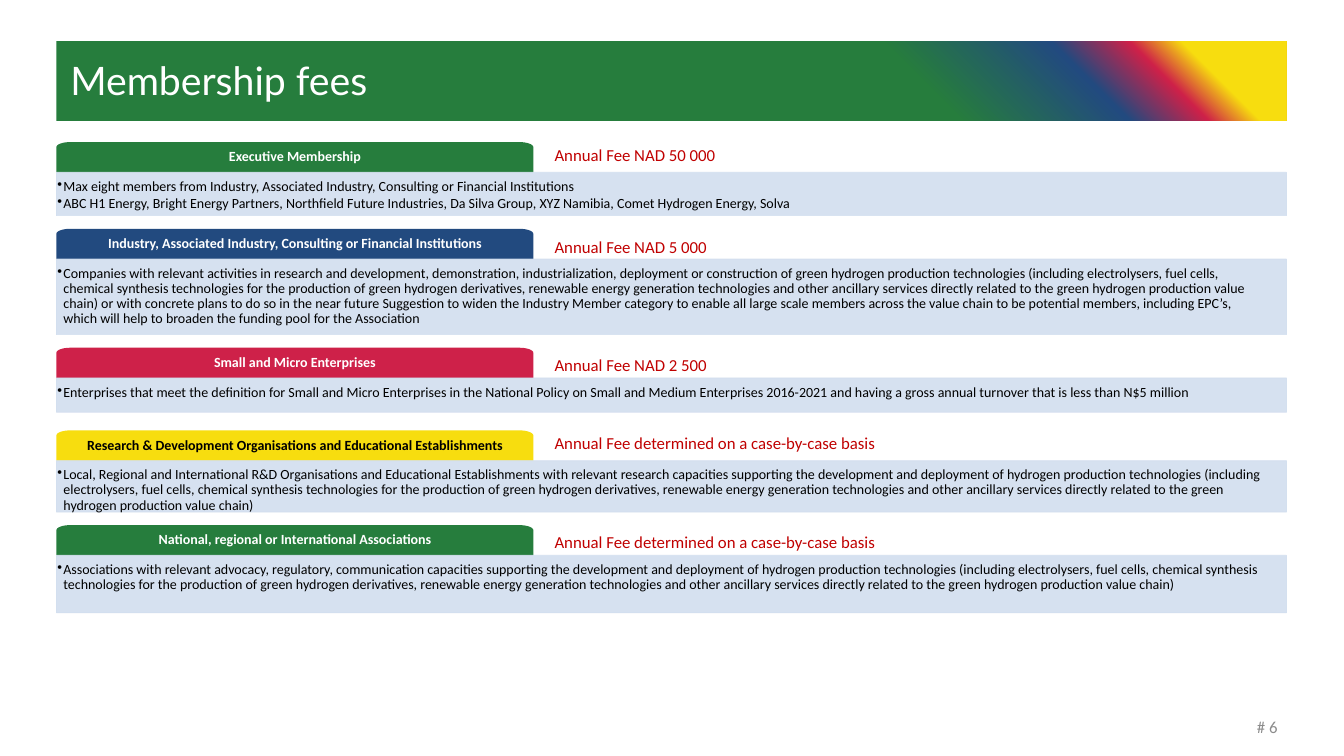
from dataclasses import dataclass
from math import cos, pi, sin

from lxml.etree import SubElement
from pptx import Presentation
from pptx.dml.color import RGBColor
from pptx.enum.shapes import MSO_SHAPE as Shape
from pptx.enum.text import MSO_ANCHOR as Anchor, PP_ALIGN as Align
from pptx.oxml import parse_xml
from pptx.oxml.ns import nsdecls, qn
from pptx.util import Inches, Pt

COLORS = {
    "green": "267D3D", "blue": "224A7F", "red": "CE2149", "yellow": "F7DD0F",
    "panel": "D2DEEF", "fee": "C00000", "grey": "8C8C8C",
    "white": "FFFFFF", "black": "000000",
}
BANNER_STOPS = [(8, "yellow"), (12, "red"), (18, "blue"), (31, "green")]

# The grid has 10 columns and 10 rows to the inch.
CELL = Inches(0.1)
LEFT, WIDTH = 5.6, 122
TAB_WIDTH, TAB_HEIGHT = 47.3, 3
FEE_LEFT, FEE_WIDTH = 54.7, 73
FIRST_TOP = 14.1


@dataclass
class Category:
    name: str
    color: str
    fee: str
    points: list
    panel_rows: float
    fee_shift: float = 0
    gap: float = 1.3
    name_color: str = "white"


CATEGORIES = [
    Category("Executive Membership", "green", "Annual Fee NAD 50 000", [
        "Max eight members from Industry, Associated Industry, Consulting or Financial Institutions",
        "ABC H1 Energy, Bright Energy Partners, Northfield Future Industries, Da Silva Group, "
        "XYZ Namibia, Comet Hydrogen Energy, Solva",
    ], 4.3, fee_shift=-0.4),
    Category("Industry, Associated Industry, Consulting or Financial Institutions", "blue",
             "Annual Fee NAD 5 000", [
        "Companies with relevant activities in research and development, demonstration, "
        "industrialization, deployment or construction of green hydrogen production technologies "
        "(including electrolysers, fuel cells, chemical synthesis technologies for the production "
        "of green hydrogen derivatives, renewable energy generation technologies and other "
        "ancillary services directly related to the green hydrogen production value chain) or "
        "with concrete plans to do so in the near future Suggestion to widen the Industry Member "
        "category to enable all large scale members across the value chain to be potential "
        "members, including EPC’s, which will help to broaden the funding pool for the Association",
    ], 7.5, fee_shift=0.1),
    Category("Small and Micro Enterprises", "red", "Annual Fee NAD 2 500", [
        "Enterprises that meet the definition for Small and Micro Enterprises in the National "
        "Policy on Small and Medium Enterprises 2016-2021 and having a gross annual turnover that "
        "is less than N$5 million",
    ], 3.4, gap=1.8),
    Category("Research & Development Organisations and Educational Establishments", "yellow",
             "Annual Fee determined on a case-by-case basis", [
        "Local, Regional and International R&D Organisations and Educational Establishments with "
        "relevant research capacities supporting the development and deployment of hydrogen "
        "production technologies (including electrolysers, fuel cells, chemical synthesis "
        "technologies for the production of green hydrogen derivatives, renewable energy "
        "generation technologies and other ancillary services directly related to the green "
        "hydrogen production value chain)",
    ], 5.1, fee_shift=-0.4, name_color="black"),
    Category("National, regional or International Associations", "green",
             "Annual Fee determined on a case-by-case basis", [
        "Associations with relevant advocacy, regulatory, communication capacities supporting the "
        "development and deployment of hydrogen production technologies (including electrolysers, "
        "fuel cells, chemical synthesis technologies for the production of green hydrogen "
        "derivatives, renewable energy generation technologies and other ancillary services "
        "directly related to the green hydrogen production value chain)",
    ], 5.7),
]


def cells(*counts):
    return [round(count * CELL) for count in counts]


def rgb(color):
    return RGBColor.from_string(COLORS[color])


class FeeSlide:
    def __init__(self, presentation):
        self.shapes = presentation.slides.add_slide(presentation.slide_layouts[6]).shapes

    def set_text(self, shape, lines, size, color, insets, font="Calibri", bold=False,
                 align=Align.LEFT, anchor=Anchor.MIDDLE, spacing=0.9, bullets=False):
        """Fill a shape with one paragraph per line; insets are in inches."""
        frame = shape.text_frame
        frame.word_wrap = True
        frame.vertical_anchor = anchor
        (frame.margin_left, frame.margin_top,
         frame.margin_right, frame.margin_bottom) = map(Inches, insets)
        for index, line in enumerate(lines):
            paragraph = frame.paragraphs[0] if index == 0 else frame.add_paragraph()
            paragraph.text = line
            if bullets:
                properties = paragraph._p.get_or_add_pPr()
                properties.set("marL", str(Inches(0.06)))
                properties.set("indent", str(-Inches(0.06)))
                SubElement(properties, qn("a:buChar"), char="•")
                paragraph.space_after = Pt(1.2)
            paragraph.alignment = align
            paragraph.line_spacing = spacing
            paragraph.font.name = font
            paragraph.font.size = Pt(size)
            paragraph.font.bold = bold
            paragraph.font.color.rgb = rgb(color)

    def label(self, box, text, size, color, insets=(0.1, 0.05, 0.1, 0.05), **style):
        self.set_text(self.shapes.add_textbox(*cells(*box)), [text], size, color, insets, **style)

    def banner(self, box):
        """Draw a bar whose colours spread from its top right corner."""
        bar = self.shapes.add_shape(Shape.RECTANGLE, *cells(*box))
        bar.shadow.inherit = False
        bar.line.fill.background()
        stops = "".join(
            f'<a:gs pos="{share * 1000}"><a:srgbClr val="{COLORS[color]}"/></a:gs>'
            for share, color in BANNER_STOPS)
        bar._element.spPr.find(qn("a:prstGeom")).addnext(parse_xml(
            f'<a:gradFill {nsdecls("a")} rotWithShape="1"><a:gsLst>{stops}</a:gsLst>'
            '<a:path path="circle"><a:fillToRect l="100000" b="100000"/></a:path></a:gradFill>'))

    def tab(self, top, category):
        """Draw a heading tab with flat elliptical upper corners."""
        across, down, steps = 1.4, 0.5, 8
        right, bottom = LEFT + TAB_WIDTH, top + TAB_HEIGHT
        angles = [pi / 2 * step / steps for step in range(steps + 1)]
        left_corner = [(LEFT + across * (1 - cos(a)), top + down * (1 - sin(a))) for a in angles]
        right_corner = [(LEFT + right - x, y) for x, y in reversed(left_corner)]
        outline = left_corner + right_corner + [(right, bottom), (LEFT, bottom)]
        builder = self.shapes.build_freeform(*cells(*outline[0]))
        builder.add_line_segments([cells(*point) for point in outline[1:]], close=True)
        heading = builder.convert_to_shape()
        heading.shadow.inherit = False
        heading.fill.solid()
        heading.fill.fore_color.rgb = rgb(category.color)
        heading.line.fill.background()
        self.set_text(heading, [category.name], 10, category.name_color,
                      (0.07, 0.05, 0.07, 0.05), bold=True, align=Align.CENTER)

    def panel(self, box, points):
        panel = self.shapes.add_shape(Shape.RECTANGLE, *cells(*box))
        panel.shadow.inherit = False
        panel.fill.solid()
        panel.fill.fore_color.rgb = rgb("panel")
        panel.line.color.rgb = rgb("panel")
        panel.line.width = Pt(0.5)
        for tint in panel._element.spPr.iter(qn("a:srgbClr")):
            SubElement(tint, qn("a:alpha"), val="90000")
        self.set_text(panel, points, 10, "black", (0.01, 0.07, 0.21, 0.07),
                      anchor=Anchor.TOP, bullets=True)


def main():
    presentation = Presentation()
    presentation.slide_width, presentation.slide_height = Inches(13.33), Inches(7.5)
    slide = FeeSlide(presentation)
    slide.banner((LEFT, 4.1, WIDTH, 7.9))
    slide.label((6, 4.5, 121.7, 7.5), "Membership fees", 28, "white", font="Lato")
    slide.label((112.1, 70.1, 15.6, 4), "# 6", 12, "grey", align=Align.RIGHT, spacing=1.0)

    top = FIRST_TOP
    for category in CATEGORIES:
        slide.label((FEE_LEFT, top + category.fee_shift, FEE_WIDTH, TAB_HEIGHT), category.fee,
                    12, "fee", insets=(0.03,) * 4, anchor=Anchor.BOTTOM)
        slide.tab(top, category)
        slide.panel((LEFT, top + TAB_HEIGHT, WIDTH, category.panel_rows), category.points)
        top += TAB_HEIGHT + category.panel_rows + category.gap
    presentation.save("out.pptx")


if __name__ == "__main__":
    main()
